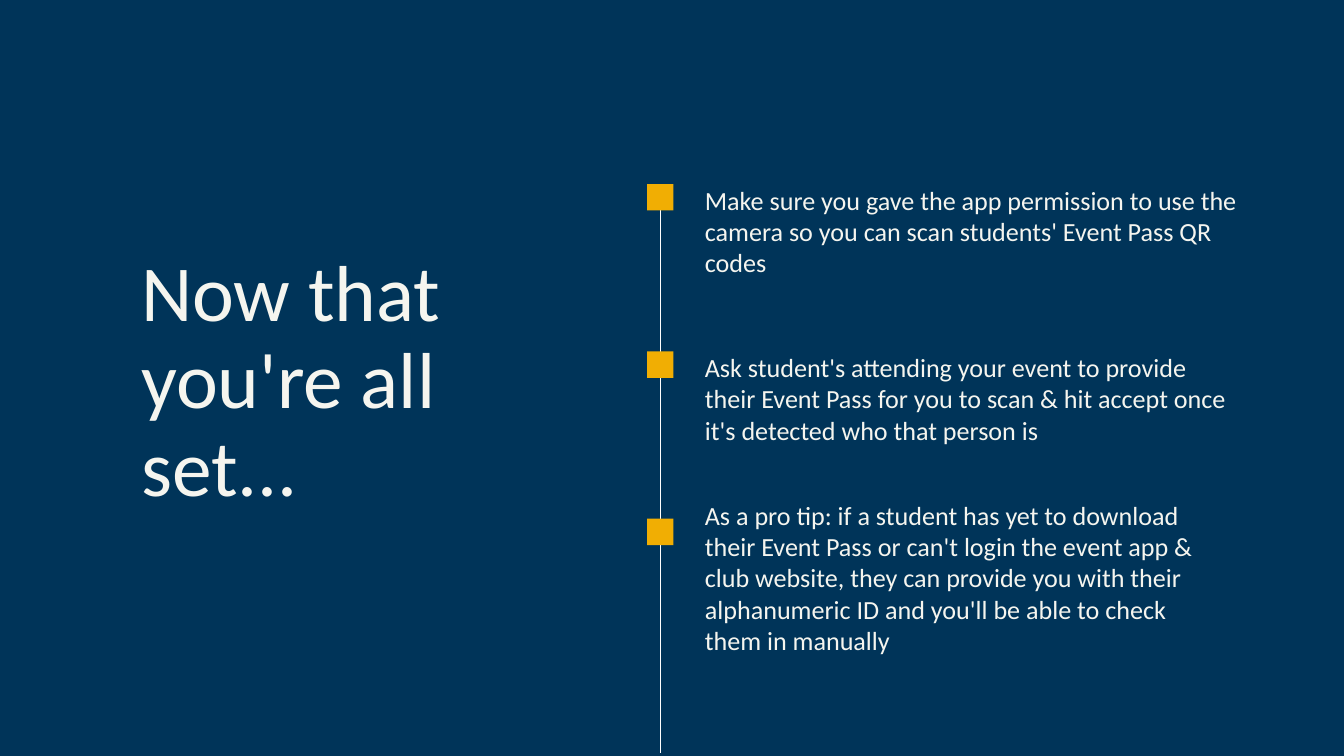
from collections import namedtuple
from dataclasses import dataclass

from lxml import etree
from pptx import Presentation
from pptx import util as u
from pptx.dml import color
from pptx.enum import shapes, text
from pptx.oxml import ns

Box = namedtuple("Box", "left top width height")


@dataclass(frozen=True)
class Theme:
    navy: color.RGBColor = color.RGBColor(0x00, 0x34, 0x59)
    cream: color.RGBColor = color.RGBColor(0xF5, 0xF5, 0xEF)
    gold: color.RGBColor = color.RGBColor(0xF1, 0xAE, 0x03)
    white: color.RGBColor = color.RGBColor(0xFF, 0xFF, 0xFF)
    font: str = "Calibri"
    title_size: float = 85
    title_line: float = 93.5
    body_size: float = 28
    body_line: float = 33.6


THEME = Theme()

# Each tip: wording, rise above its marker, width
TIPS = [
    ("Make sure you gave the app permission to use the camera so you can "
     "scan students' Event Pass QR codes", 0, 582),
    ("Ask student's attending your event to provide their Event Pass for you "
     "to scan & hit accept once it's detected who that person is", 0, 559.5),
    ("As a pro tip: if a student has yet to download their Event Pass or "
     "can't login the event app & club website, they can provide you with their "
     "alphanumeric ID and you'll be able to check them in manually", 21, 559.5),
]


def write_text(holder, wording, *, size, line):
    frame = holder.text_frame
    frame.word_wrap = True
    frame.auto_size = text.MSO_AUTO_SIZE.NONE
    frame.vertical_anchor = text.MSO_ANCHOR.TOP
    frame.margin_left = frame.margin_right = u.Pt(0)
    frame.margin_top = frame.margin_bottom = u.Pt(0)
    para = frame.paragraphs[0]
    para.alignment = text.PP_ALIGN.LEFT
    para.line_spacing = u.Pt(line)
    para.space_before = u.Pt(0)
    span = para.add_run()
    span.text = wording
    span.font.name = THEME.font
    span.font.size = u.Pt(size)
    span.font.color.rgb = THEME.cream


def place_title(page, box, wording):
    title = page.shapes.title
    title.left, title.top, title.width, title.height = map(u.Pt, box)
    write_text(title, wording, size=THEME.title_size, line=THEME.title_line)


def place_timeline(page, box, tips, step=179.25, marker_side=28.3):
    # Thin line, from the centre of the first marker downwards
    center = box.left + marker_side / 2
    line = page.shapes.add_connector(
        shapes.MSO_CONNECTOR.STRAIGHT,
        u.Pt(center), u.Pt(box.top + marker_side / 2),
        u.Pt(center), u.Pt(box.top + box.height))
    line.line.color.rgb = THEME.white
    line.line.width = u.Pt(0.7)
    etree.SubElement(line._element.spPr, ns.qn("a:effectLst"))

    # Square markers with their tips
    text_left = box.left + 62
    for index, (wording, rise, width) in enumerate(tips):
        top = box.top + index * step
        marker = page.shapes.add_shape(
            shapes.MSO_SHAPE.RECTANGLE, u.Pt(box.left), u.Pt(top),
            u.Pt(marker_side), u.Pt(marker_side))
        marker.shadow.inherit = False
        marker.fill.solid()
        marker.fill.fore_color.rgb = THEME.gold
        marker.line.fill.background()

        height = 165 if rise else 99.5
        tip = page.shapes.add_textbox(
            u.Pt(text_left), u.Pt(top - rise), u.Pt(width), u.Pt(height))
        write_text(tip, wording, size=THEME.body_size, line=THEME.body_line)


def main():
    deck = Presentation()
    deck.slide_width, deck.slide_height = u.Pt(1440), u.Pt(810)
    page = deck.slides.add_slide(deck.slide_layouts.get_by_name("Title Only"))
    page.background.fill.solid()
    page.background.fill.fore_color.rgb = THEME.navy

    place_title(page, Box(151.2, 268, 459.5, 280), "Now that you're all set...")
    place_timeline(page, Box(693.3, 197.3, 644, 609.5), TIPS)
    deck.save("out.pptx")


if __name__ == "__main__":
    main()
